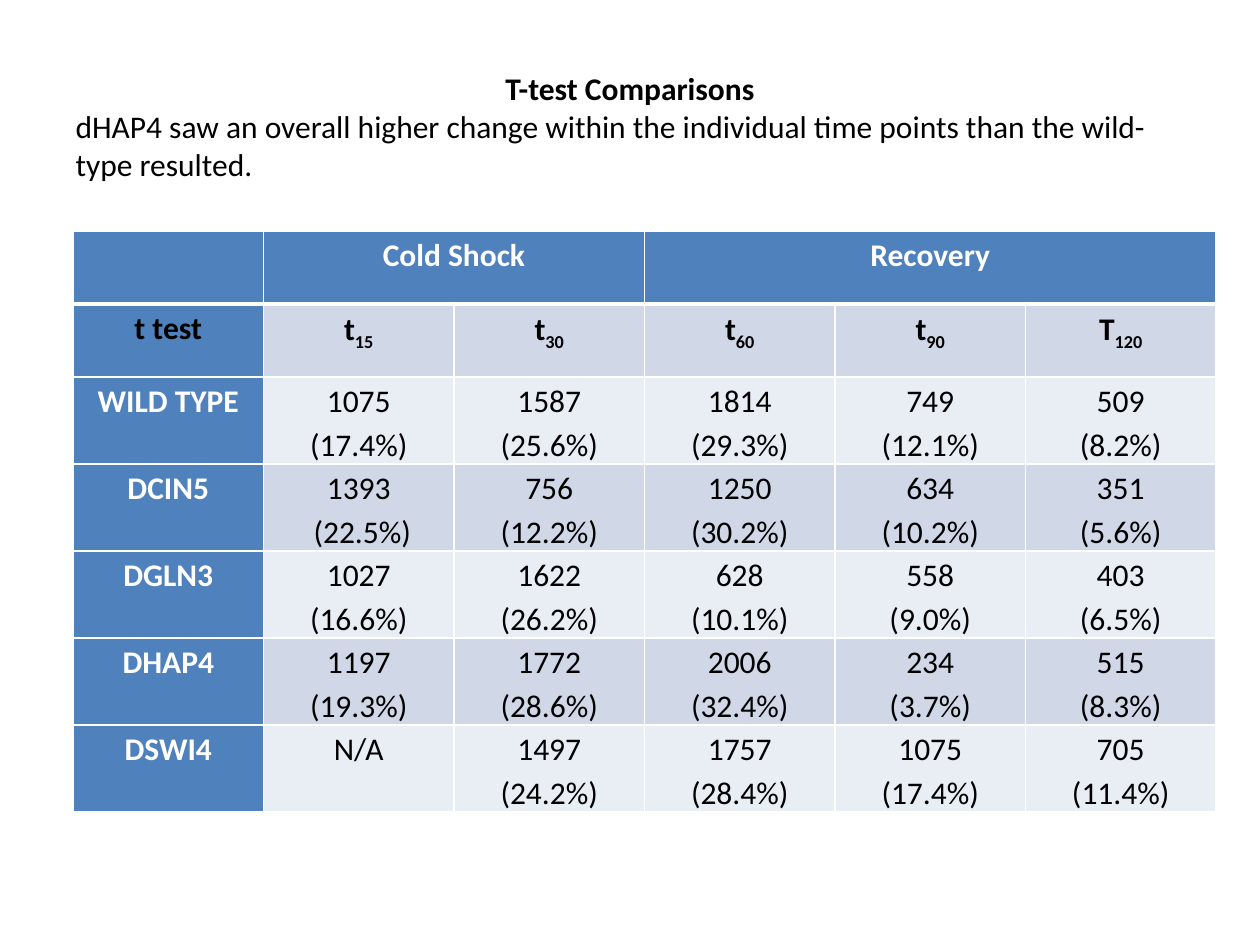
import pptx
import pptx.util
import pptx.dml.color
import pptx.enum.text
import pptx.oxml
import pptx.oxml.ns

PX = 914400 // 126
ALIGN = pptx.enum.text.PP_ALIGN
HUES = {"head": "4F81BD", "dark": "D0D8E8", "pale": "E9EDF4",
        "white": "FFFFFF", "black": "000000"}
TIMES = [("t", "15"), ("t", "30"), ("t", "60"), ("t", "90"), ("T", "120")]
STRAINS = [
    ("WILD TYPE", ["1075\n(17.4%)", "1587\n(25.6%)", "1814\n(29.3%)", "749\n(12.1%)", "509\n(8.2%)"]),
    ("DCIN5", ["1393\n (22.5%)", "756\n(12.2%)", "1250\n(30.2%)", "634\n(10.2%)", "351\n(5.6%)"]),
    ("DGLN3", ["1027\n(16.6%)", "1622\n(26.2%)", "628\n(10.1%)", "558\n(9.0%)", "403\n(6.5%)"]),
    ("DHAP4", ["1197\n(19.3%)", "1772\n(28.6%)", "2006\n(32.4%)", "234\n(3.7%)", "515\n(8.3%)"]),
    ("DSWI4", ["N/A", "1497\n(24.2%)", "1757\n(28.4%)", "1075\n(17.4%)", "705\n(11.4%)"]),
]


def color(name):
    return pptx.dml.color.RGBColor.from_string(HUES[name])


def style(para, align, bold, hue="black"):
    para.alignment = align
    font = para.font
    font.name = "Calibri"
    font.size = pptx.util.Pt(18)
    font.bold = bold
    font.color.rgb = color(hue)


def border(cell, row):
    props = cell._tc.get_or_add_tcPr()
    thick = {0: "lnB", 1: "lnT"}.get(row)
    for side in ("lnL", "lnR", "lnT", "lnB"):
        width = pptx.util.Pt(3 if side == thick else 1)
        props.append(pptx.oxml.parse_xml(
            f'<a:{side} {pptx.oxml.ns.nsdecls("a")} w="{width}"><a:solidFill>'
            f'<a:srgbClr val="{HUES["white"]}"/></a:solidFill></a:{side}>'))


def write(cell, text, bold, hue):
    cell.text = text
    for para in cell.text_frame.paragraphs:
        style(para, ALIGN.CENTER, bold, hue)
        para.line_spacing = 1.15


def add_head(slide, left, top, width, height):
    title = slide.shapes.title
    title.left, title.top, title.width, title.height = (
        n * PX for n in (left, top, width, height))
    frame = title.text_frame
    frame.word_wrap = True
    frame.auto_size = pptx.enum.text.MSO_AUTO_SIZE.SHAPE_TO_FIT_TEXT
    frame.vertical_anchor = pptx.enum.text.MSO_ANCHOR.TOP
    frame.text = ("T-test Comparisons\ndHAP4 saw an overall higher change within "
                  "the individual time points than the wild-type resulted.")
    head, body = frame.paragraphs
    style(head, ALIGN.CENTER, True)
    style(body, ALIGN.LEFT, False)


def add_grid(slide, left, top, width, height):
    count = len(STRAINS) + 2
    shape = slide.shapes.add_table(
        count, 6, left * PX, top * PX, width * PX, height * PX)
    table = shape.table
    for line in table.rows:
        line.height = 73 * PX
    shape.height = height * PX

    for row in range(count):
        for col in range(6):
            cell = table.cell(row, col)
            cell.margin_left = cell.margin_right = 9 * PX
            cell.margin_top = cell.margin_bottom = 0
            border(cell, row)
            cell.fill.solid()
            band = "dark" if row % 2 else "pale"
            cell.fill.fore_color.rgb = color("head" if row == 0 or col == 0 else band)

    for text, first, last in (("Cold Shock", 1, 2), ("Recovery", 3, 5)):
        table.cell(0, first).merge(table.cell(0, last))
        write(table.cell(0, first), text, True, "white")

    write(table.cell(1, 0), "t test", True, "black")
    for col, (base, sub) in enumerate(TIMES, 1):
        cell = table.cell(1, col)
        write(cell, base, True, "black")
        run = cell.text_frame.paragraphs[0].add_run()
        run.text = sub
        run._r.get_or_add_rPr().set("baseline", "-25000")

    for row, (name, values) in enumerate(STRAINS, 2):
        write(table.cell(row, 0), name, True, "white")
        for col, value in enumerate(values, 1):
            write(table.cell(row, col), value, False, "black")


def main():
    deck = pptx.Presentation()
    deck.slide_width, deck.slide_height = 1260 * PX, 945 * PX
    slide = deck.slides.add_slide(deck.slide_layouts[5])
    add_grid(slide, 73, 231, 1143, 570)
    add_head(slide, 63, 63, 1134, 127)
    deck.save("out.pptx")


if __name__ == "__main__":
    main()
